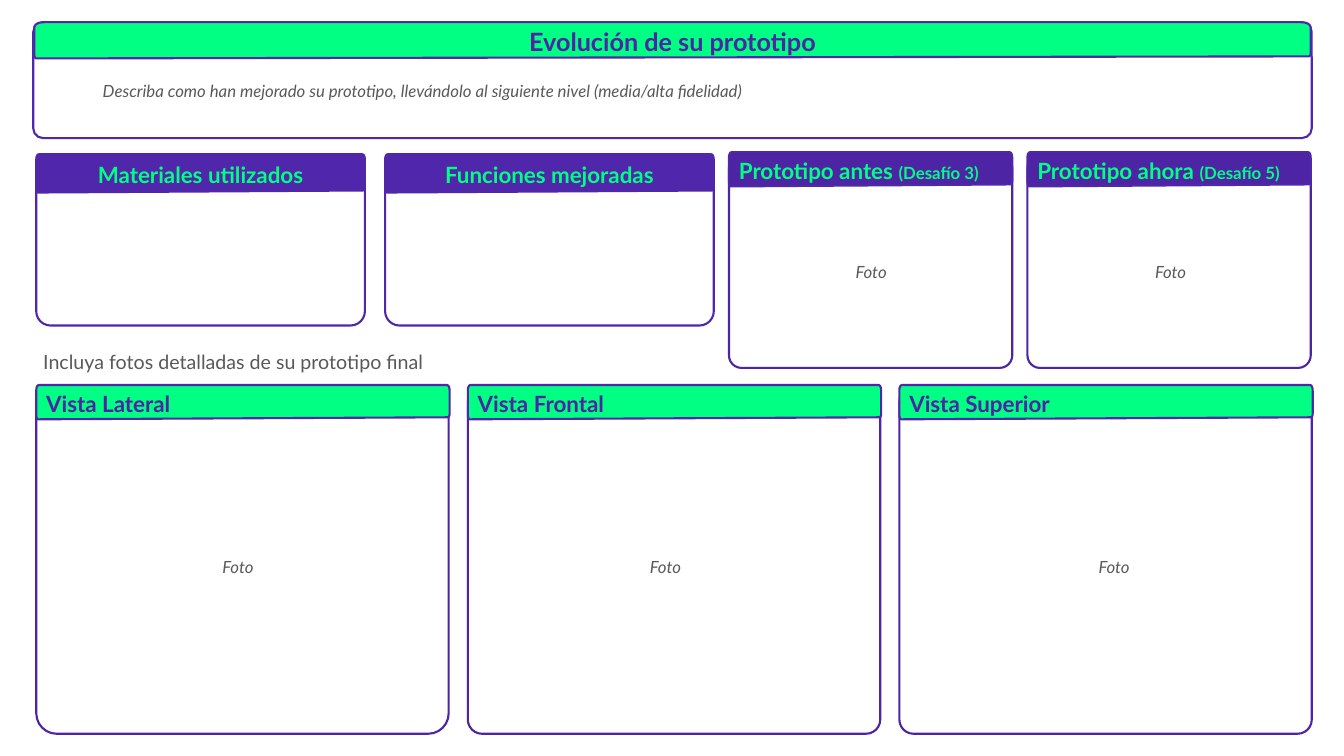
from dataclasses import dataclass

from pptx import Presentation
from pptx.dml.color import RGBColor
from pptx.enum.shapes import MSO_SHAPE
from pptx.enum.text import MSO_ANCHOR, PP_ALIGN
from pptx.util import Inches, Pt

ROUND = MSO_SHAPE.ROUNDED_RECTANGLE
MIDDLE = MSO_ANCHOR.MIDDLE
LEFT, CENTER = PP_ALIGN.LEFT, PP_ALIGN.CENTER


@dataclass(frozen=True)
class Theme:
    """Hold the colours, type sizes and font of the slide."""

    green: str = "00FF83"
    violet: str = "5027AB"
    purple: str = "4D24A4"
    gray: str = "595959"
    white: str = "FFFFFF"
    font: str = "Lato"
    title: int = 18
    head: int = 16
    label: int = 14
    note: int = 12
    line: float = 1.5


THEME = Theme()


def color(code):
    """Turn a hex code into a colour."""
    return RGBColor.from_string(code)


def paint(shape, fill, line):
    """Set fill and outline and drop the shadow."""
    shape.shadow.inherit = False
    if fill:
        shape.fill.solid()
        shape.fill.fore_color.rgb = color(fill)
    else:
        shape.fill.background()
    shape.line.color.rgb = color(line)
    shape.line.width = Pt(THEME.line)


def style(run, size, ink, bold=False, italic=False):
    """Format one run."""
    font = run.font
    font.name, font.size = THEME.font, Pt(size)
    font.bold, font.italic = bold, italic
    font.color.rgb = color(ink)


def bend(start, turn, end, steps=6):
    """List the points of a curved corner."""
    marks = [i / steps for i in range(steps + 1)]
    return [
        tuple((1 - t) ** 2 * a + 2 * t * (1 - t) * b + t * t * c
              for a, b, c in zip(start, turn, end))
        for t in marks
    ]


def add_frame(slide, box, adj, line, fill=None):
    """Draw a rounded frame."""
    frame = slide.shapes.add_shape(ROUND, *map(Inches, box))
    frame.adjustments[0] = adj
    paint(frame, fill, line)


def add_head(slide, box, text, fill, ink, size=THEME.head, align=LEFT,
             tail="", curve=0.03):
    """Draw a header band with a slightly slanted lower edge."""
    left, top, width, height = box
    right, low = left + width, top + height
    high = low - 0.02
    points = (
        bend((left, top + 0.06), (left, top), (left + curve, top))
        + bend((right - curve, top), (right, top), (right, top + 0.06))
        + bend((right, high - 0.04), (right, high), (right - 0.02, high))
        + bend((left + 0.02, low), (left, low), (left, low - 0.06))
    )
    spots = [(Inches(x), Inches(y)) for x, y in points]
    pen = slide.shapes.build_freeform(*spots[0], scale=1.0)
    pen.add_line_segments(spots[1:], close=True)
    band = pen.convert_to_shape()
    paint(band, fill, THEME.violet)
    frame = band.text_frame
    frame.word_wrap = True
    frame.vertical_anchor = MIDDLE
    para = frame.paragraphs[0]
    para.text = text
    para.alignment = align
    para.line_spacing, para.space_after = 1.07, Pt(8)
    style(para.runs[0], size, ink, bold=True)
    if tail:
        run = para.add_run()
        run.text = tail
        style(run, THEME.note, ink, bold=True)


def add_text(slide, box, text, size=THEME.note, italic=True, align=LEFT):
    """Place a line of gray text."""
    frame = slide.shapes.add_textbox(*map(Inches, box)).text_frame
    frame.word_wrap = True
    para = frame.paragraphs[0]
    para.text = text
    para.alignment = align
    style(para.runs[0], size, THEME.gray, italic=italic)


def add_photo(slide, left, top):
    """Mark the place of a photo."""
    add_text(slide, (left, top, 1.18, 0.3), "Foto", align=CENTER)


def add_intro(slide):
    """Build the title panel."""
    add_frame(slide, (0.33, 0.22, 12.68, 1.15), 0.084, THEME.violet)
    add_head(slide, (0.34, 0.22, 12.66, 0.36), "Evolución de su prototipo",
             THEME.green, THEME.purple, THEME.title, CENTER, curve=0.11)
    add_text(slide, (0.92, 0.75, 12.32, 0.3),
             "Describa como han mejorado su prototipo, "
             "llevándolo al siguiente nivel (media/alta fidelidad)")


def add_lists(slide):
    """Build the two panels for materials and functions."""
    names = "Materiales utilizados", "Funciones mejoradas"
    for i, name in enumerate(names):
        left = 0.36 + 3.46 * i
        add_frame(slide, (left, 1.53, 3.26, 1.7), 0.084, THEME.violet)
        add_head(slide, (left, 1.53, 3.26, 0.38), name,
                 THEME.violet, THEME.green, align=CENTER)


def add_stages(slide):
    """Build the panels for the prototype before and now."""
    stages = ("Prototipo antes ", "(Desafío 3)"), ("Prototipo ahora ", "(Desafío 5)")
    for i, (name, tail) in enumerate(stages):
        left = 7.23 + 2.96 * i
        add_frame(slide, (left, 1.54, 2.81, 2.11), 0.059, THEME.purple)
        add_head(slide, (left, 1.51, 2.81, 0.34), name,
                 THEME.purple, THEME.green, tail=tail)
        add_photo(slide, 8.05 + 2.97 * i, 2.55)


def add_views(slide):
    """Build the three panels for the final views."""
    add_text(slide, (0.33, 3.42, 6.75, 0.34),
             "Incluya fotos detalladas de su prototipo final",
             THEME.label, italic=False)
    views = (
        ("Vista Lateral", 0.059, None, 1.77),
        ("Vista Frontal", 0.041, None, 6.01),
        ("Vista Superior", 0.041, THEME.white, 10.46),
    )
    for i, (name, adj, fill, photo) in enumerate(views):
        left = 0.36 + 4.28 * i
        add_frame(slide, (left, 3.85, 4.09, 3.43), adj, THEME.purple, fill)
        add_head(slide, (left, 3.82, 4.1, 0.34), name,
                 THEME.green, THEME.purple)
        add_photo(slide, photo, 5.47)


def main():
    """Build and save the slide."""
    deck = Presentation()
    deck.slide_width, deck.slide_height = Inches(13.33), Inches(7.5)
    slide = deck.slides.add_slide(deck.slide_layouts[6])
    add_intro(slide)
    add_lists(slide)
    add_stages(slide)
    add_views(slide)
    deck.save("out.pptx")


if __name__ == "__main__":
    main()
